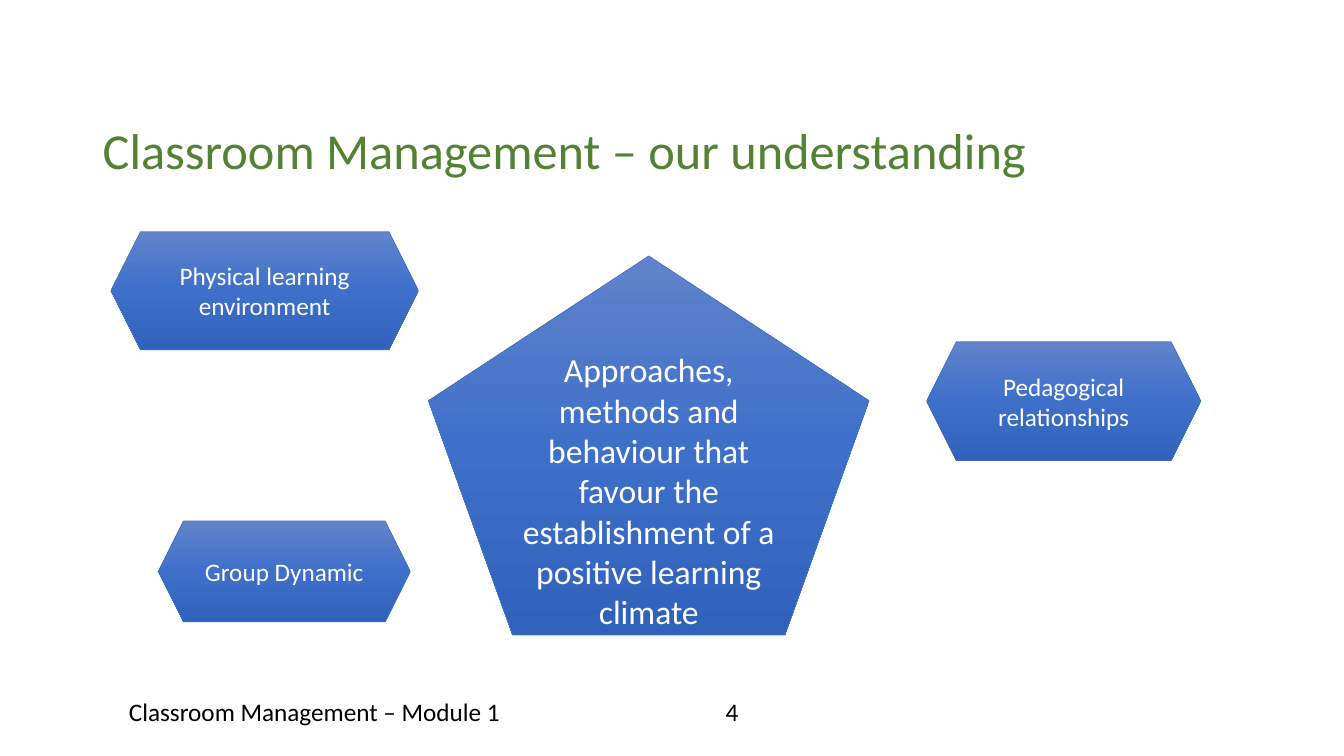
from copy import deepcopy

from pptx import Presentation
from pptx.dml.color import RGBColor
from pptx.enum.shapes import MSO_SHAPE
from pptx.enum.text import MSO_ANCHOR, PP_ALIGN
from pptx.oxml.ns import qn
from pptx.util import Inches, Pt

COLORS = {
    "title": "548235",
    "footer": "000000",
    "label": "FFFFFF",
    "outline": "4472C4",
    "top": "6183CB",
    "middle": "3E70CA",
    "bottom": "3062BB",
}


def write_text(shape, text, size, color, align, anchor):
    frame = shape.text_frame
    frame.word_wrap = True
    frame.vertical_anchor = anchor
    para = frame.paragraphs[0]
    para.text = text
    para.alignment = align
    para.font.name = "Calibri"
    para.font.size = Pt(size)
    para.font.color.rgb = RGBColor.from_string(COLORS[color])
    return para


def fill_gradient(shape):
    shape.fill.gradient()
    shape.fill.gradient_angle = 270
    stop_list = shape._element.spPr.find(qn("a:gradFill")).find(qn("a:gsLst"))
    stop_list.append(deepcopy(stop_list[-1]))
    names = ("top", "middle", "bottom")
    for stop, name, position in zip(shape.fill.gradient_stops, names, (0, 0.5, 1)):
        stop.color.rgb = RGBColor.from_string(COLORS[name])
        stop.position = position


deck = Presentation()
deck.slide_width = Inches(13.33)
deck.slide_height = Inches(7.5)
page = deck.slides.add_slide(deck.slide_layouts[6])

texts = [
    ("Classroom Management – our understanding", (0.92, 1.2, 11.5, 0.97), 36, "title", PP_ALIGN.LEFT, 0.9),
    ("Classroom Management – Module 1", (1.18, 6.86, 4.5, 0.4), 18, "footer", PP_ALIGN.LEFT, 1.0),
    ("4", (5.76, 6.86, 3, 0.4), 18, "footer", PP_ALIGN.CENTER, 1.0),
]
for text, place, size, color, align, spacing in texts:
    box = page.shapes.add_textbox(*map(Inches, place))
    para = write_text(box, text, size, color, align, MSO_ANCHOR.TOP)
    para.line_spacing = spacing

ideas = [
    (
        "Approaches, methods and behaviour that favour the establishment of a positive learning climate",
        MSO_SHAPE.REGULAR_PENTAGON, (4.25, 2.54, 4.37, 3.76), 24,
    ),
    ("Pedagogical relationships", MSO_SHAPE.HEXAGON, (9.19, 3.39, 2.72, 1.18), 18),
    ("Physical learning environment", MSO_SHAPE.HEXAGON, (1.1, 2.3, 3.05, 1.17), 18),
    ("Group Dynamic", MSO_SHAPE.HEXAGON, (1.57, 5.17, 2.5, 1), 18),
]
for text, kind, place, size in ideas:
    idea = page.shapes.add_shape(kind, *map(Inches, place))
    idea.shadow.inherit = False
    fill_gradient(idea)
    idea.line.color.rgb = RGBColor.from_string(COLORS["outline"])
    idea.line.width = Pt(0.5)
    write_text(idea, text, size, "label", PP_ALIGN.CENTER, MSO_ANCHOR.MIDDLE)

deck.save("out.pptx")
